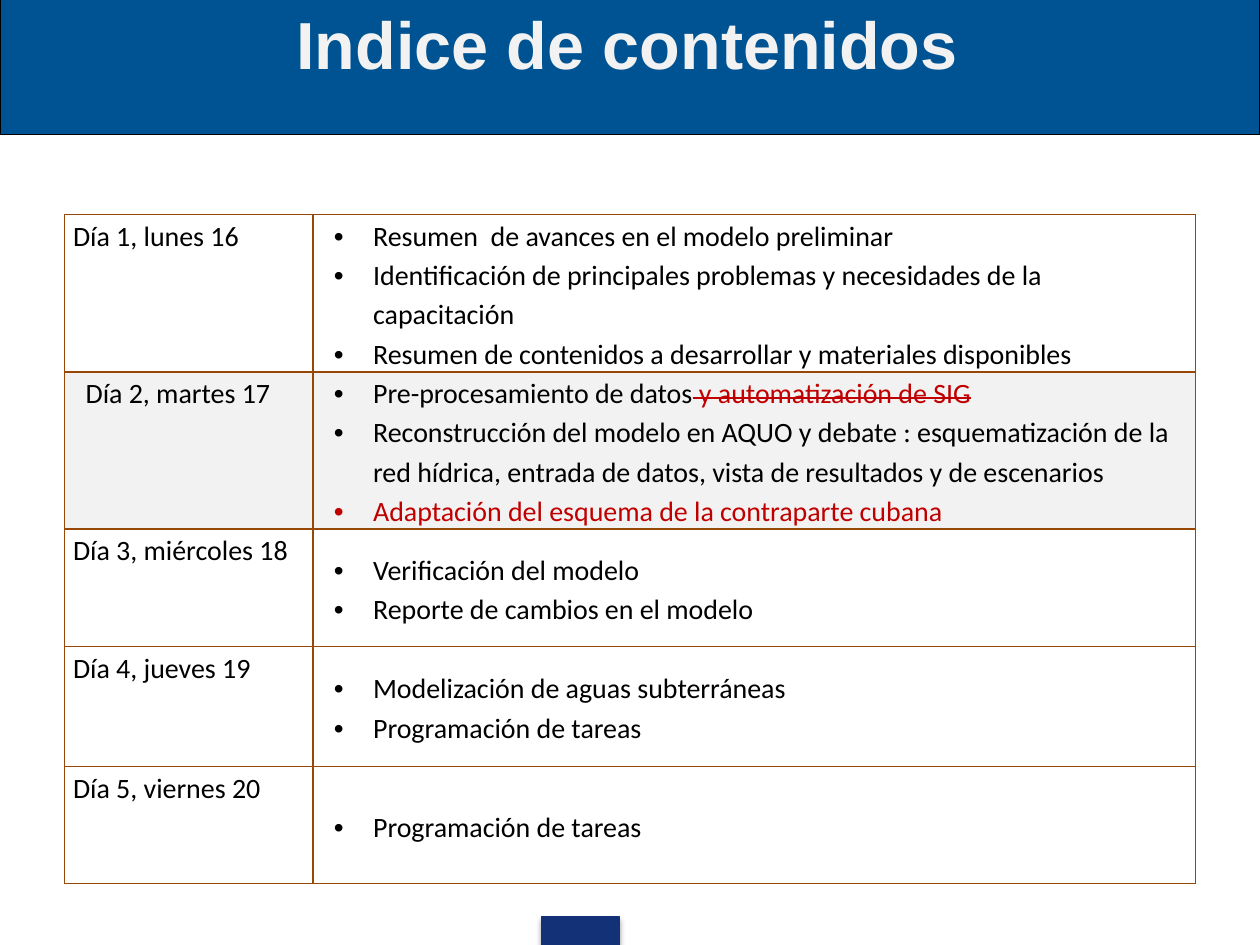
from pptx import Presentation
from pptx.dml.color import RGBColor
from pptx.enum.shapes import MSO_SHAPE
from pptx.enum.text import MSO_ANCHOR, MSO_AUTO_SIZE, PP_ALIGN
from pptx.oxml import parse_xml
from pptx.oxml.ns import nsdecls
from pptx.util import Pt

HUES = {"band": "005392", "tab": "133176", "ink": "000000", "pale": "F2F2F2",
        "red": "C00000", "edge": "984806"}
TITLE = {"name": "Arial", "size": Pt(38), "bold": True}
BODY = {"name": "Calibri", "size": Pt(16)}
CELL = {"margin_left": Pt(5), "margin_right": Pt(5), "margin_top": 0, "margin_bottom": 0}
WIDTHS = [142, 504.5]
DAYS = [
    ("Día 1, lunes 16", 61, [
        [("Resumen  de avances en el modelo preliminar", "ink")],
        [("Identificación de principales problemas y necesidades de la capacitación", "ink")],
        [("Resumen de contenidos a desarrollar y materiales disponibles", "ink")]]),
    ("Día 2, martes 17", 67, [
        [("Pre-procesamiento de datos", "ink"), (" y automatización de SIG", "red", True)],
        [("Reconstrucción del modelo en AQUO y debate : esquematización de la red hídrica, "
          "entrada de datos, vista de resultados y de escenarios", "ink")],
        [("Adaptación del esquema de la contraparte cubana", "red")]]),
    ("Día 3, miércoles 18", 67, [
        [("Verificación del modelo", "ink")],
        [("Reporte de cambios en el modelo", "ink")]]),
    ("Día 4, jueves 19", 68.5, [
        [("Modelización de aguas subterráneas", "ink")],
        [("Programación de tareas", "ink")]]),
    ("Día 5, viernes 20", 67, [
        [("Programación de tareas", "ink")]]),
]
SHADED = 1


def tint(hue):
    return RGBColor.from_string(HUES[hue])


def apply(item, form):
    for key, value in form.items():
        setattr(item, key, value)


def place(item, left, top, width, height):
    apply(item, {"left": Pt(left), "top": Pt(top), "width": Pt(width), "height": Pt(height)})


def add_box(slide, area, fill, line):
    box = slide.shapes.add_shape(MSO_SHAPE.RECTANGLE, *map(Pt, area))
    box.shadow.inherit = False
    box.fill.solid()
    box.fill.fore_color.rgb = tint(fill)
    box.line.color.rgb = tint(line)
    box.line.width = Pt(0.75)
    return box


def add_shade(box):
    box._element.spPr.find("{*}effectLst").append(parse_xml(
        f'<a:outerShdw {nsdecls("a")} blurRad="{Pt(3.1)}" dist="{Pt(1.8)}" dir="5400000" '
        f'rotWithShape="0"><a:srgbClr val="{HUES["ink"]}"><a:alpha val="35000"/>'
        '</a:srgbClr></a:outerShdw>'))


def add_run(para, text, hue, form, strike=False):
    run = para.add_run()
    run.text = text
    apply(run.font, form)
    run.font.color.rgb = tint(hue)
    if strike:
        run._r.get_or_add_rPr().set("strike", "sngStrike")


def set_title(slide, text):
    title = slide.shapes.title
    place(title, -3, -2, 723, 90)
    slide.shapes._spTree.append(title._element)
    frame = title.text_frame
    apply(frame, {"word_wrap": True, "auto_size": MSO_AUTO_SIZE.NONE,
                  "vertical_anchor": MSO_ANCHOR.TOP})
    para = frame.paragraphs[0]
    para.alignment = PP_ALIGN.CENTER
    add_run(para, text, "pale", TITLE)


def add_edges(cell):
    props = cell._tc.get_or_add_tcPr()
    for spot, side in enumerate("LRTB"):
        props.insert(spot, parse_xml(
            f'<a:ln{side} {nsdecls("a")} w="{Pt(1)}"><a:solidFill>'
            f'<a:srgbClr val="{HUES["edge"]}"/></a:solidFill></a:ln{side}>'))


def set_cell(cell, lines, shaded, bullet=False):
    apply(cell, CELL)
    cell.vertical_anchor = MSO_ANCHOR.MIDDLE if bullet else MSO_ANCHOR.TOP
    if shaded:
        cell.fill.solid()
        cell.fill.fore_color.rgb = tint("pale")
    else:
        cell.fill.background()
    add_edges(cell)
    frame = cell.text_frame
    for spot, parts in enumerate(lines):
        para = frame.add_paragraph() if spot else frame.paragraphs[0]
        props = para._p.get_or_add_pPr()
        if bullet:
            props.set("marL", str(Pt(29.5)))
            props.set("indent", str(Pt(-22.5)))
            props.append(parse_xml(f'<a:buFont {nsdecls("a")} typeface="Arial"/>'))
            props.append(parse_xml(f'<a:buChar {nsdecls("a")} char="•"/>'))
        elif shaded:
            props.set("marL", str(Pt(7.2)))
        para.line_spacing = 1.15
        for text, hue, *strike in parts:
            add_run(para, text, hue, BODY, *strike)


def add_plan(slide):
    high = sum(day[1] for day in DAYS)
    area = map(Pt, (36.75, 122.5, sum(WIDTHS), high))
    table = slide.shapes.add_table(len(DAYS), len(WIDTHS), *area).table
    apply(table, {"first_row": False, "horz_banding": False})
    for col, width in zip(table.columns, WIDTHS):
        col.width = Pt(width)
    for spot, (day, height, tasks) in enumerate(DAYS):
        table.rows[spot].height = Pt(height)
        shaded = spot == SHADED
        set_cell(table.cell(spot, 0), [[(day, "ink")]], shaded)
        set_cell(table.cell(spot, 1), tasks, shaded, True)


def main():
    deck = Presentation()
    apply(deck, {"slide_width": Pt(720), "slide_height": Pt(540)})
    slide = deck.slides.add_slide(deck.slide_layouts[5])
    add_shade(add_box(slide, (309.5, 524, 44.5, 16), "tab", "tab"))
    add_box(slide, (0, -2, 720, 79), "band", "ink")
    set_title(slide, "Indice de contenidos")
    add_plan(slide)
    deck.save("out.pptx")


if __name__ == "__main__":
    main()
